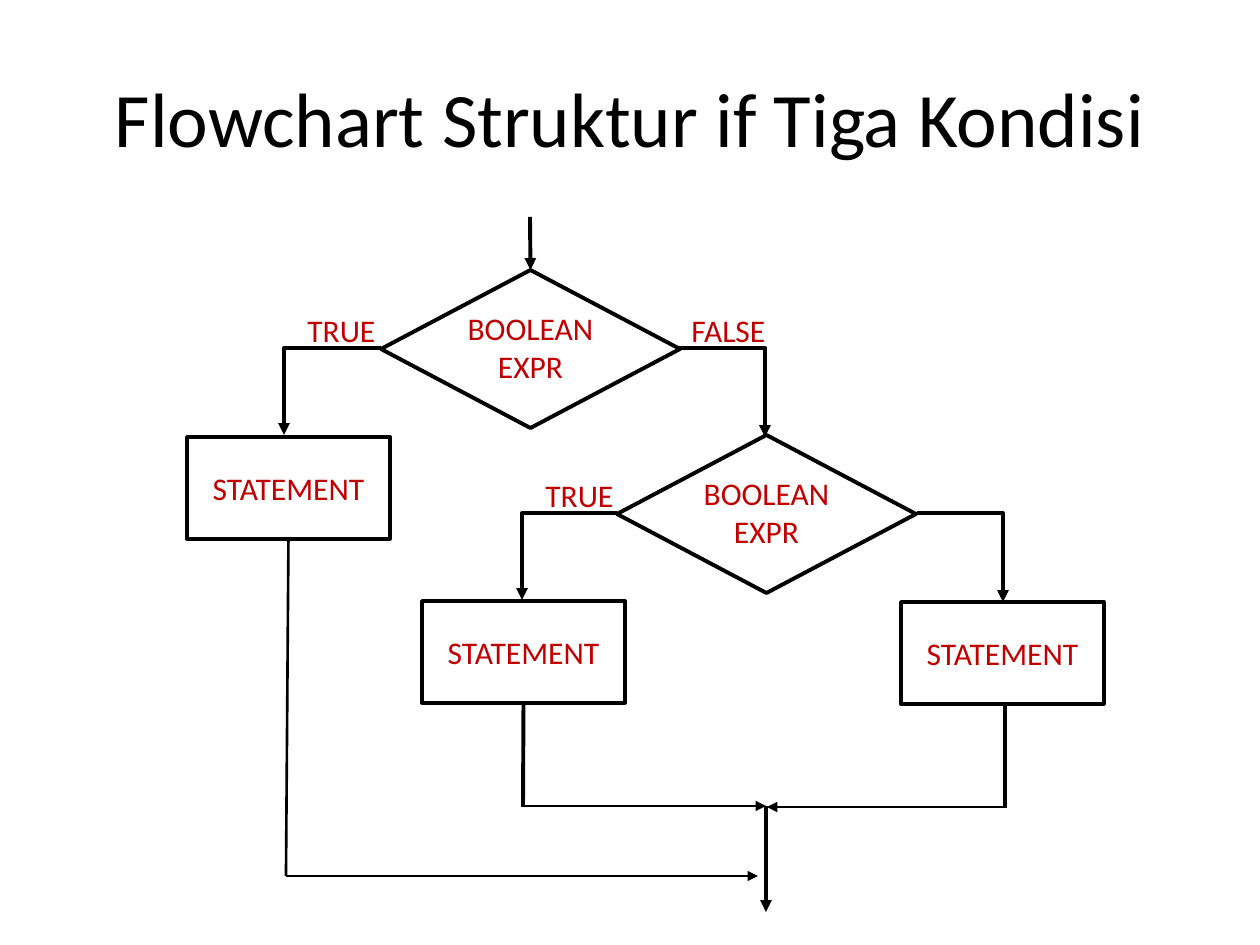
from typing import NamedTuple

from pptx import Presentation
from pptx.dml.color import RGBColor
from pptx.enum.shapes import MSO_CONNECTOR, MSO_SHAPE
from pptx.enum.text import MSO_ANCHOR, PP_ALIGN
from pptx.oxml.ns import qn
from pptx.util import Emu, Pt
from lxml import etree

PX = 914400 / 126
FONT = "Calibri"
BLACK = RGBColor(0x00, 0x00, 0x00)
WHITE = RGBColor(0xFF, 0xFF, 0xFF)
RED = RGBColor(0xC0, 0x00, 0x00)
STRAIGHT = MSO_CONNECTOR.STRAIGHT
RECT, DECISION = MSO_SHAPE.RECTANGLE, MSO_SHAPE.FLOWCHART_DECISION
TOP, MIDDLE = MSO_ANCHOR.TOP, MSO_ANCHOR.MIDDLE
LEFT, CENTER = PP_ALIGN.LEFT, PP_ALIGN.CENTER
SITE_TOP, SITE_BOTTOM = 0, 2
THICK, MEDIUM, THIN = 2.25, 2, 1.5


class Point(NamedTuple):
    x: int
    y: int


class Box(NamedTuple):
    x: int
    y: int
    w: int
    h: int


class Flow(NamedTuple):
    start: Point
    end: Point
    width: float
    head: bool = False
    tail: bool = False
    begin_at: str = ""
    end_at: str = ""


class Elbow(NamedTuple):
    start: Point
    end: Point


STATEMENTS = {
    "first": Box(187, 437, 203, 102),
    "second": Box(422, 601, 203, 102),
    "third": Box(901, 602, 203, 102),
}
DECISIONS = {
    "outer": Box(381, 270, 299, 158),
    "inner": Box(617, 435, 299, 158),
}
LABELS = [
    ("FALSE", Box(679, 305, 100, 53)),
    ("TRUE", Box(295, 305, 100, 53)),
    ("TRUE", Box(533, 470, 100, 53)),
]
ELBOWS = [
    Elbow(Point(679, 348), Point(765, 437)),
    Elbow(Point(381, 348), Point(284, 435)),
    Elbow(Point(917, 513), Point(1003, 602)),
    Elbow(Point(617, 513), Point(522, 600)),
]
FLOWS = [
    Flow(Point(530, 217), Point(530, 270), THICK, tail=True, end_at="outer"),
    Flow(Point(766, 806), Point(766, 912), THICK, tail=True),
    Flow(Point(523, 703), Point(523, 807), THICK, begin_at="second"),
    Flow(Point(1005, 702), Point(1005, 808), THICK),
    Flow(Point(524, 806), Point(766, 806), THIN, tail=True),
    Flow(Point(767, 807), Point(1004, 807), THIN, head=True),
    Flow(Point(288, 539), Point(286, 876), THIN, begin_at="first"),
    Flow(Point(286, 876), Point(758, 876), THIN, tail=True),
]


def px(*values: int) -> list[Emu]:
    return [Emu(round(v * PX)) for v in values]


def write(s, text: str, *, size: int = 18, color: RGBColor = RED,
          align=CENTER, anchor=MIDDLE, inset: bool = True) -> None:
    tf = s.text_frame
    tf.word_wrap = True
    tf.vertical_anchor = anchor
    if not inset:
        tf.margin_left = tf.margin_right = tf.margin_top = tf.margin_bottom = 0
    p = tf.paragraphs[0]
    p.alignment = align
    r = p.add_run()
    r.text = text
    r.font.name = FONT
    r.font.size = Pt(size)
    r.font.color.rgb = color


def style_line(s, width: float, head: bool = False, tail: bool = False) -> None:
    s.line.color.rgb = BLACK
    s.line.width = Pt(width)
    ln = s.line._get_or_add_ln()
    for tag, wanted in (("a:headEnd", head), ("a:tailEnd", tail)):
        if wanted:
            etree.SubElement(ln, qn(tag), type="triangle")


def add_textbox(slide, text: str, box: Box, **fmt) -> None:
    write(slide.shapes.add_textbox(*px(*box)), text, **fmt)


def add_node(slide, kind, box: Box, width: float):
    s = slide.shapes.add_shape(kind, *px(*box))
    s.shadow.inherit = False
    style_line(s, width)
    return s


def add_statement(slide, box: Box):
    s = add_node(slide, RECT, box, MEDIUM)
    s.fill.background()
    write(s, "STATEMENT")
    return s


def add_decision(slide, box: Box):
    s = add_node(slide, DECISION, box, THICK)
    s.fill.solid()
    s.fill.fore_color.rgb = WHITE
    write(s, "BOOLEAN EXPR", anchor=TOP, inset=False)
    return s


def add_elbow(slide, elbow: Elbow) -> None:
    start, end = elbow
    builder = slide.shapes.build_freeform(start.x, start.y, scale=PX)
    builder.add_line_segments([(end.x, start.y), end], close=False)
    s = builder.convert_to_shape()
    s.shadow.inherit = False
    s.fill.background()
    style_line(s, THICK, tail=True)


def add_flow(slide, flow: Flow, nodes: dict) -> None:
    s = slide.shapes.add_connector(STRAIGHT, *px(*flow.start, *flow.end))
    if flow.begin_at:
        s.begin_connect(nodes[flow.begin_at], SITE_BOTTOM)
    if flow.end_at:
        s.end_connect(nodes[flow.end_at], SITE_TOP)
    style_line(s, flow.width, flow.head, flow.tail)
    etree.SubElement(s._element.spPr, qn("a:effectLst"))


def main() -> None:
    prs = Presentation()
    prs.slide_width, prs.slide_height = px(1260, 945)
    slide = prs.slides.add_slide(prs.slide_layouts[6])
    add_textbox(slide, "Flowchart Struktur if Tiga Kondisi",
                Box(63, 38, 1134, 158), size=44, color=BLACK)
    nodes = {name: add_statement(slide, box) for name, box in STATEMENTS.items()}
    nodes |= {name: add_decision(slide, box) for name, box in DECISIONS.items()}
    for elbow in ELBOWS:
        add_elbow(slide, elbow)
    for text, box in LABELS:
        add_textbox(slide, text, box, align=LEFT, anchor=TOP)
    for flow in FLOWS:
        add_flow(slide, flow, nodes)
    prs.save("out.pptx")


if __name__ == "__main__":
    main()
